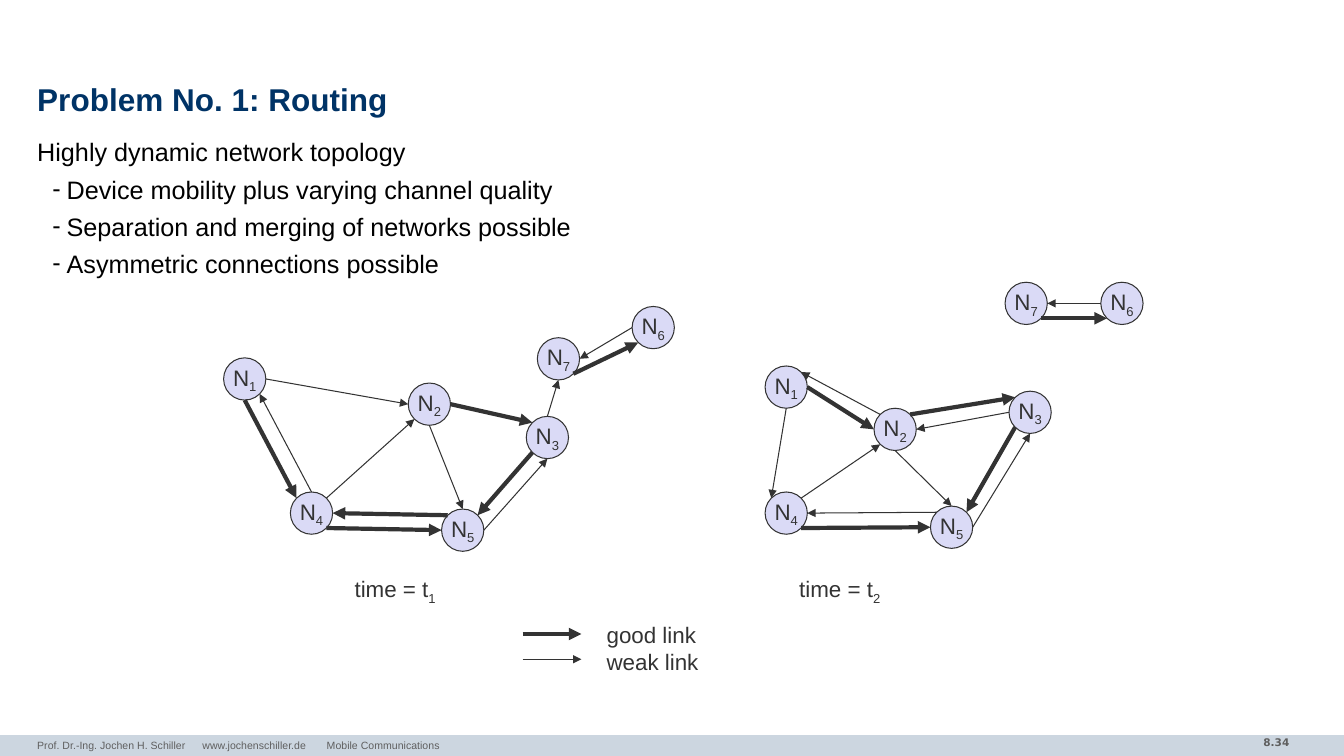
"""Build the slide on routing in ad-hoc networks with two topology snapshots."""
from math import cos, radians, sin
from typing import NamedTuple

from lxml import etree
from pptx import Presentation
from pptx.dml import color
from pptx.enum import shapes, text
from pptx.oxml import ns
from pptx.util import Pt

INK = "333333"
GREY = "5F5F5F"
RADIUS = 15.1
SITES = ("N", "NW", "W", "SW", "S", "SE", "E", "NE")
GOOD, WEAK = 3, 0.75


class Point(NamedTuple):
    x: float
    y: float


class Link(NamedTuple):
    start: int
    start_site: str
    end: int
    end_site: str
    weight: float


class Network(NamedTuple):
    time: str
    caption: Point
    nodes: dict[int, Point]
    links: list[Link]


class Span(NamedTuple):
    words: str
    baseline: int = 0


class Style(NamedTuple):
    size: float = 16
    hue: str = INK
    bold: bool = False
    face: str = "Arial"


SHARED_LINKS = [
    Link(4, "NE", 2, "SW", WEAK),
    Link(4, "SE", 5, "W", GOOD),
    Link(3, "SW", 5, "NE", GOOD),
    Link(5, "E", 3, "S", WEAK),
    Link(2, "S", 5, "N", WEAK),
    Link(7, "SE", 6, "SW", GOOD),
    Link(6, "W", 7, "E", WEAK),
]
NETWORKS = [
    Network(
        "1", Point(246.2, 407.5),
        {1: Point(174.8, 270.7), 2: Point(306.7, 288.7), 3: Point(391, 312.5),
         4: Point(222.5, 366.5), 5: Point(330.5, 378.7), 6: Point(466.6, 234),
         7: Point(398.9, 256.3)},
        SHARED_LINKS + [
            Link(1, "E", 2, "W", WEAK),
            Link(5, "NW", 4, "E", GOOD),
            Link(4, "N", 1, "SE", WEAK),
            Link(1, "S", 4, "NW", GOOD),
            Link(2, "E", 3, "NW", GOOD),
            Link(3, "N", 7, "S", WEAK),
        ]),
    Network(
        "2", Point(563.8, 407.5),
        {1: Point(561.6, 276.5), 2: Point(639.4, 306.7), 3: Point(735.8, 294.5),
         4: Point(561.6, 366.5), 5: Point(679.7, 376.6), 6: Point(801.4, 216.7),
         7: Point(733, 216.7)},
        SHARED_LINKS + [
            Link(1, "E", 2, "W", GOOD),
            Link(5, "NW", 4, "E", WEAK),
            Link(1, "S", 4, "NW", WEAK),
            Link(2, "NE", 3, "NW", GOOD),
            Link(2, "NW", 1, "NE", WEAK),
            Link(3, "W", 2, "E", WEAK),
        ]),
]
BODY = [
    (0, "Highly dynamic network topology"),
    (1, "Device mobility plus varying channel quality"),
    (1, "Separation and merging of networks possible"),
    (1, "Asymmetric connections possible"),
]


def rgb(value: str) -> color.RGBColor:
    return color.RGBColor.from_string(value)


def add_span(para, span: Span, style: Style = Style()) -> None:
    run = para.add_run()
    run.text = span.words
    run.font.size = Pt(style.size)
    run.font.name = style.face
    run.font.bold = style.bold
    run.font.color.rgb = rgb(style.hue)
    if span.baseline:
        run._r.get_or_add_rPr().set("baseline", str(span.baseline))


def set_insets(frame, side: float, end: float) -> None:
    frame.margin_left = frame.margin_right = Pt(side)
    frame.margin_top = frame.margin_bottom = Pt(end)


def place(shape, left: float, top: float, width: float, height: float) -> None:
    shape.left, shape.top = Pt(left), Pt(top)
    shape.width, shape.height = Pt(width), Pt(height)


def add_label(slide, left: float, top: float, width: float, height: float,
              rows: list[list[Span]], style: Style = Style(), fit: bool = True):
    box = slide.shapes.add_textbox(Pt(left), Pt(top), Pt(width), Pt(height))
    frame = box.text_frame
    frame.word_wrap = not fit
    if fit:
        frame.auto_size = text.MSO_AUTO_SIZE.SHAPE_TO_FIT_TEXT
    for index, row in enumerate(rows):
        para = frame.add_paragraph() if index else frame.paragraphs[0]
        for span in row:
            add_span(para, span, style)
    return box


def add_arrow(slide, start: Point, end: Point, weight: float) -> None:
    arrow = slide.shapes.add_connector(
        shapes.MSO_CONNECTOR.STRAIGHT, Pt(start.x), Pt(start.y), Pt(end.x), Pt(end.y))
    arrow.line.color.rgb = rgb(INK)
    arrow.line.width = Pt(weight)
    etree.SubElement(arrow.line._get_or_add_ln(), ns.qn("a:tailEnd"), type="triangle")
    etree.SubElement(arrow._element.spPr, ns.qn("a:effectLst"))


def add_node(slide, number: int, center: Point) -> None:
    node = slide.shapes.add_shape(
        shapes.MSO_SHAPE.OVAL, Pt(center.x - RADIUS), Pt(center.y - RADIUS),
        Pt(2 * RADIUS), Pt(2 * RADIUS))
    node.shadow.inherit = False
    node.fill.solid()
    node.fill.fore_color.rgb = rgb("DADAF6")
    node.line.color.rgb = rgb(INK)
    node.line.width = Pt(0.75)
    frame = node.text_frame
    frame.word_wrap = False
    frame.vertical_anchor = text.MSO_ANCHOR.MIDDLE
    para = frame.paragraphs[0]
    para.alignment = text.PP_ALIGN.CENTER
    for span in (Span("N"), Span(str(number), -25000)):
        add_span(para, span)


def rim(center: Point, site: str) -> Point:
    angle = radians(90 + 45 * SITES.index(site))
    return Point(center.x + RADIUS * cos(angle), center.y - RADIUS * sin(angle))


def add_network(slide, network: Network) -> None:
    for number, center in network.nodes.items():
        add_node(slide, number, center)
    for link in network.links:
        add_arrow(slide, rim(network.nodes[link.start], link.start_site),
                  rim(network.nodes[link.end], link.end_site), link.weight)
    add_label(slide, *network.caption, 73.4, 26.6,
              [[Span("time = t"), Span(network.time, -25000)]])


def fill_placeholders(slide) -> None:
    title, body = slide.shapes.title, slide.placeholders[1]
    place(title, 26.6, 56.2, 907.2, 33.8)
    place(body, 26.6, 97.2, 907.2, 413.3)
    for holder in (title, body):
        set_insets(holder.text_frame, 0, 0)
        holder.text_frame.auto_size = text.MSO_AUTO_SIZE.NONE
    title.text_frame.vertical_anchor = text.MSO_ANCHOR.MIDDLE
    body.text_frame.vertical_anchor = text.MSO_ANCHOR.TOP
    heading = title.text_frame.paragraphs[0]
    heading.alignment = text.PP_ALIGN.LEFT
    heading.line_spacing = 0.85
    add_span(heading, Span("Problem No. 1: Routing"), Style(22.5, "003366", True))
    for index, (level, words) in enumerate(BODY):
        para = body.text_frame.add_paragraph() if index else body.text_frame.paragraphs[0]
        para.level = level
        para.line_spacing = 1.02
        para.space_before = Pt(4.5 if index else 0)
        props = para._p.get_or_add_pPr()
        props.set("marL", str(Pt(21 * level)))
        props.set("indent", str(Pt(-10.2 * level)))
        if level:
            tint = etree.SubElement(props, ns.qn("a:buClr"))
            etree.SubElement(tint, ns.qn("a:srgbClr"), val="000000")
            etree.SubElement(props, ns.qn("a:buChar"), char="-")
        else:
            etree.SubElement(props, ns.qn("a:buNone"))
        add_span(para, Span(words), Style(18, "000000"))


def add_footer(slide) -> None:
    bar = slide.shapes.add_shape(shapes.MSO_SHAPE.RECTANGLE, 0, Pt(525), Pt(960), Pt(15))
    bar.shadow.inherit = False
    bar.fill.solid()
    bar.fill.fore_color.rgb = rgb("CCD6E0")
    bar.line.fill.background()
    number = add_label(slide, 799.2, 522, 128.9, 18.7, [[Span("8.34")]],
                       Style(7.5, GREY, True, "DejaVu Sans"), fit=False)
    number.text_frame.paragraphs[0].alignment = text.PP_ALIGN.RIGHT
    credit = add_label(
        slide, 26.6, 524.2, 627.8, 15.8,
        [[Span("Prof. Dr.-Ing. Jochen H. Schiller\twww.jochenschiller.de\tMobile Communications")]],
        Style(7.5, GREY), fit=False)
    set_insets(credit.text_frame, 0, 3.6)
    props = credit.text_frame.paragraphs[0]._p.get_or_add_pPr()
    tabs = etree.SubElement(props, ns.qn("a:tabLst"))
    for stop in (118, 206.8):
        etree.SubElement(tabs, ns.qn("a:tab"), pos=str(Pt(stop)), algn="l")


def main() -> None:
    deck = Presentation()
    deck.slide_width, deck.slide_height = Pt(960), Pt(540)
    page = deck.slides.add_slide(deck.slide_layouts[1])
    fill_placeholders(page)
    add_footer(page)
    for height, weight in ((452.9, GOOD), (470.9, WEAK)):
        add_arrow(page, Point(373.3, height), Point(415.3, height), weight)
    add_label(page, 426.2, 439.9, 79.9, 46.1, [[Span("good link")], [Span("weak link")]])
    for network in NETWORKS:
        add_network(page, network)
    deck.save("out.pptx")


if __name__ == "__main__":
    main()
